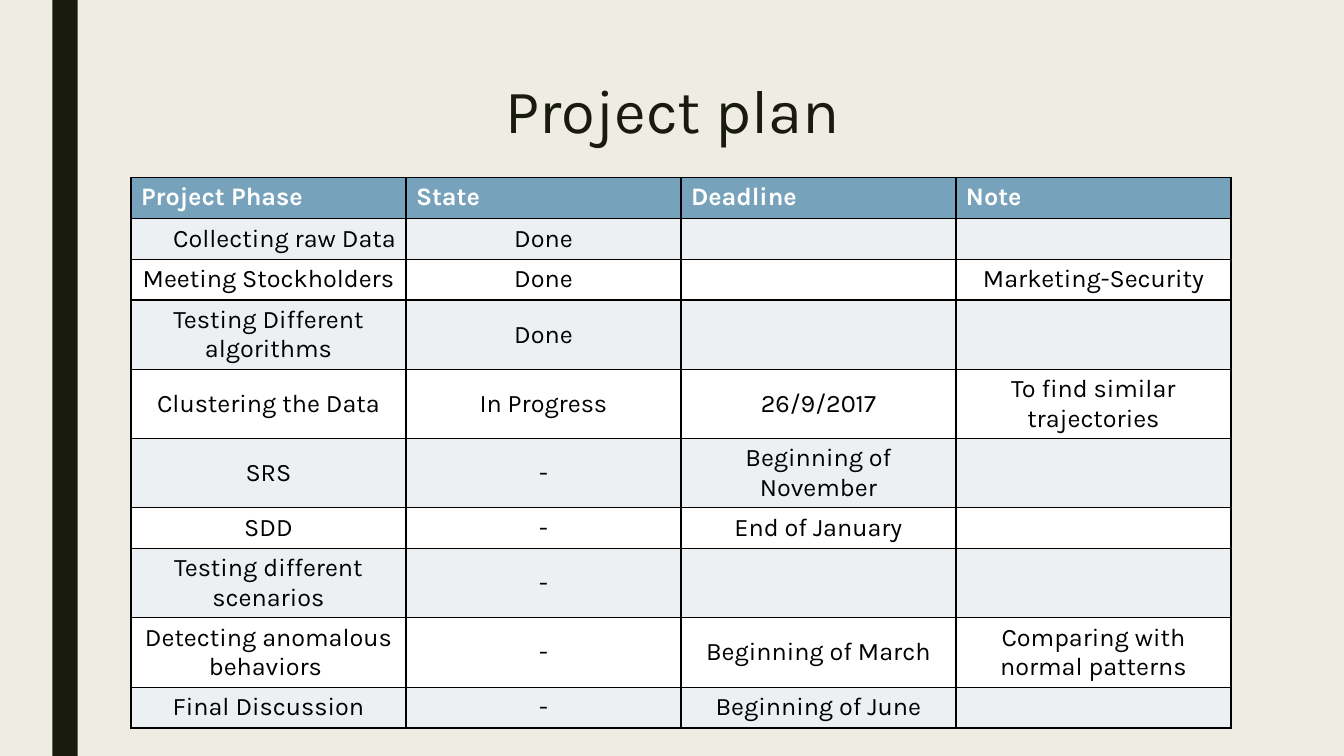
from lxml.etree import SubElement
from pptx import Presentation
from pptx.dml.color import RGBColor
from pptx.enum.shapes import MSO_SHAPE as Preset
from pptx.enum.text import MSO_ANCHOR as Anchor, PP_ALIGN as Align
from pptx.oxml.ns import qn
from pptx.util import Cm, Pt

FONT = "Karla"
INK, PAPER = "191B0E", "EFEDE3"
BLACK, WHITE = "000000", "FFFFFF"
HEADER_BLUE, BAND = "77A2BB", "ECF0F3"
HEADINGS = ("Project Phase", "State", "Deadline", "Note")
PHASES = (
    ("Collecting raw Data", "Done", "", ""),
    ("Meeting Stockholders", "Done", "", "Marketing-Security"),
    ("Testing Different algorithms", "Done", "", ""),
    ("Clustering the Data", "In Progress", "26/9/2017", "To find similar trajectories"),
    ("SRS", "-", "Beginning of November", ""),
    ("SDD", "-", "End of January", ""),
    ("Testing different scenarios", "-", "", ""),
    ("Detecting anomalous behaviors ", "-", "Beginning of March",
     "Comparing with normal patterns"),
    ("Final Discussion", "-", "Beginning of June", ""),
)


def paint(fill, color):
    fill.solid()
    fill.fore_color.rgb = RGBColor.from_string(color)


def add_run(paragraph, text, size, color, bold=False):
    run = paragraph.add_run()
    run.text = text
    run.font.name = FONT
    run.font.size = Pt(size)
    run.font.bold = bold
    paint(run.font.fill, color)


def add_side_bar(slide):
    bar = slide.shapes.add_shape(Preset.RECTANGLE, Cm(1.32), 0, Cm(0.64), Cm(19.05))
    bar.shadow.inherit = False
    paint(bar.fill, INK)
    bar.line.fill.background()


def set_title(slide, text):
    title = slide.shapes.title
    title.left, title.top = Cm(3.81), Cm(1.9)
    title.width, title.height = Cm(26.67), Cm(4.11)
    title.text_frame.vertical_anchor = Anchor.TOP
    heading = title.text_frame.paragraphs[0]
    heading.alignment = Align.CENTER
    heading.line_spacing = 0.89
    add_run(heading, text, 44, INK)


def add_borders(cell):
    properties = cell._tc.get_or_add_tcPr()
    for position, side in enumerate(("lnL", "lnR", "lnT", "lnB")):
        border = SubElement(properties, qn(f"a:{side}"), w=str(Pt(1)))
        properties.insert(position, border)
        fill = SubElement(border, qn("a:solidFill"))
        SubElement(fill, qn("a:srgbClr"), val=BLACK)


def fill_cell(cell, text, background, color, align, anchor, bold=False):
    paint(cell.fill, background)
    add_borders(cell)
    cell.vertical_anchor = anchor
    if text:
        paragraph = cell.text_frame.paragraphs[0]
        paragraph.alignment = align
        add_run(paragraph, text, 18, color, bold)


def add_plan(slide):
    row_count, column_count = len(PHASES) + 1, len(HEADINGS)
    row_height, column_width = Cm(1.03), Cm(6.93)
    plan = slide.shapes.add_table(
        row_count, column_count, Cm(3.3), Cm(4.47),
        column_width * column_count, row_height * row_count).table
    for column in plan.columns:
        column.width = column_width
    for row in plan.rows:
        row.height = row_height
    for column, heading in enumerate(HEADINGS):
        fill_cell(plan.cell(0, column), heading, HEADER_BLUE, WHITE,
                  Align.LEFT, Anchor.TOP, bold=True)
    for row, phase in enumerate(PHASES, start=1):
        background = BAND if row % 2 else WHITE
        for column, text in enumerate(phase):
            align = Align.RIGHT if (row, column) == (1, 0) else Align.CENTER
            fill_cell(plan.cell(row, column), text, background, BLACK,
                      align, Anchor.MIDDLE)


def main():
    deck = Presentation()
    deck.slide_width, deck.slide_height = Cm(33.87), Cm(19.05)
    slide = deck.slides.add_slide(deck.slide_layouts.get_by_name("Title Only"))
    paint(slide.background.fill, PAPER)
    add_side_bar(slide)
    set_title(slide, "Project plan ")
    add_plan(slide)
    deck.save("out.pptx")


if __name__ == "__main__":
    main()
